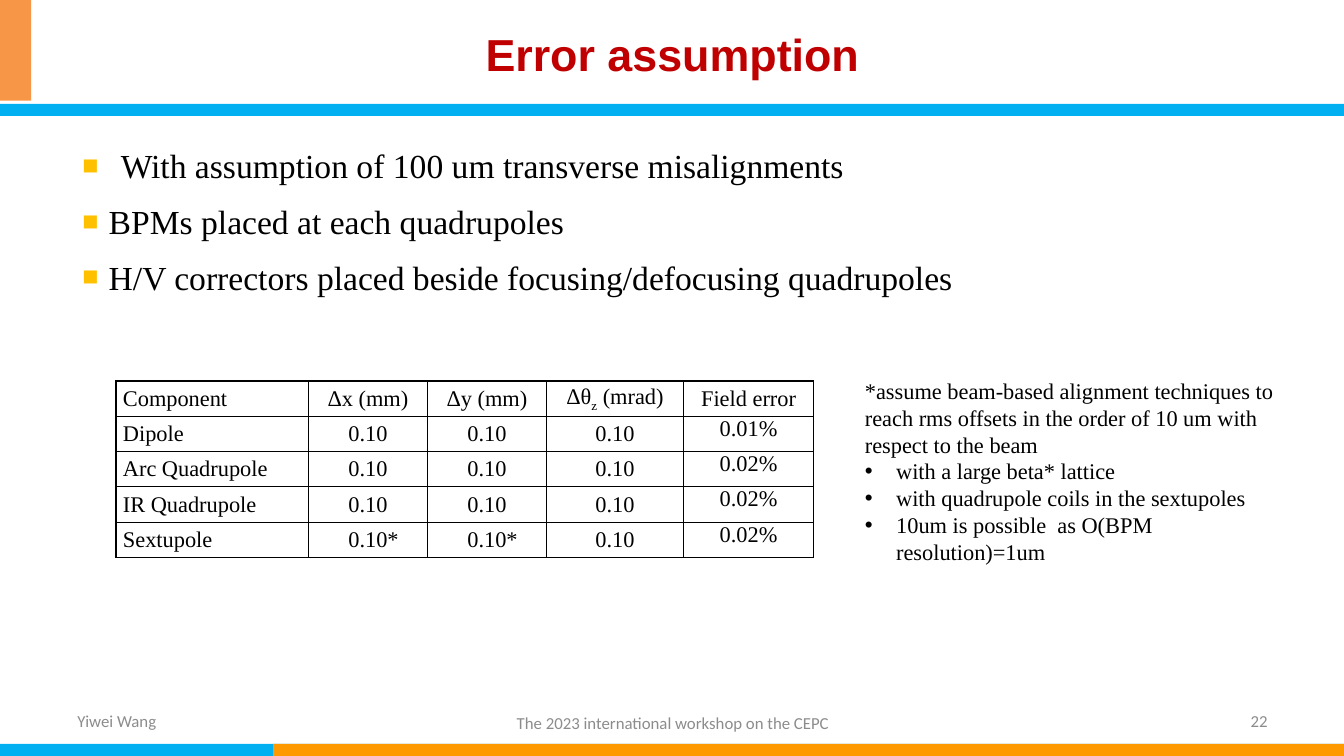
from pptx import Presentation
from pptx.dml.color import RGBColor
from pptx.enum.shapes import MSO_SHAPE as Shape
from pptx.enum.text import MSO_ANCHOR as Anchor, PP_ALIGN as Align
from pptx.oxml.ns import qn
from pptx.util import Inches, Pt
from lxml.etree import SubElement

COLORS = {"blue": "00B0F0", "amber": "FF9900", "orange": "F79646", "red": "C00000",
          "gold": "FFC000", "black": "000000", "gray": "8C8C8C", "white": "FFFFFF"}
SERIF = "Times New Roman"
BARS = [
    ((0, 7.38, 13.33, 0.12), "blue"),
    ((2.71, 7.38, 10.63, 0.12), "amber"),
    ((0, 1.03, 13.33, 0.12), "blue"),
    ((0, 0, 0.31, 1), "orange"),
]
TITLE = "Error assumption"
POINTS = [
    ("With assumption of 100 um transverse misalignments", 0.38),
    ("BPMs placed at each quadrupoles", 0.26),
    ("H/V correctors placed beside focusing/defocusing quadrupoles", 0.26),
]
NOTE = ("*assume beam-based alignment techniques to reach rms offsets "
        "in the order of 10 um with respect to the beam")
NOTE_POINTS = [
    "with a large beta* lattice",
    "with quadrupole coils in the sextupoles",
    "10um is possible  as O(BPM resolution)=1um",
]
FOOTERS = [
    ("22", (9.56, 6.95, 3.11, 0.4), Align.RIGHT),
    ("Yiwei Wang", (0.67, 6.95, 3.11, 0.4), Align.LEFT),
    ("The 2023 international workshop on the CEPC", (3.92, 6.98, 5.51, 0.39), Align.CENTER),
]
TABLE_BOX = (1.15, 3.78, 6.92, 1.75)
COL_WIDTHS = [1.91, 1.18, 1.18, 1.36, 1.29]
ROW_HEIGHT = 0.35
ROWS = [
    ["Component", "Δx (mm)", "Δy (mm)", ("Δθ", "z", " (mrad)"), "Field error"],
    ["Dipole", "0.10", "0.10", "0.10", "0.01%"],
    ["Arc Quadrupole", "0.10", "0.10", "0.10", "0.02%"],
    ["IR Quadrupole", "0.10", "0.10", "0.10", "0.02%"],
    ["Sextupole", "0.10*", "0.10*", "0.10", "0.02%"],
]
TITLE_FONT = {"name": "Arial", "size": Pt(32), "bold": True}
POINT_FONT = {"name": SERIF, "size": Pt(24)}
SMALL_FONT = {"name": SERIF, "size": Pt(16)}
FOOTER_FONT = {"name": "Calibri", "size": Pt(12)}


def rgb(name):
    return RGBColor.from_string(COLORS[name])


def inches(box):
    return [Inches(v) for v in box]


def set_all(target, values):
    for key, value in values.items():
        setattr(target, key, value)


def add_run(p, text, font, color="black"):
    r = p.add_run()
    r.text = text
    set_all(r.font, font)
    r.font.color.rgb = rgb(color)
    return r


def add_text(s, box, anchor=Anchor.TOP):
    tf = s.shapes.add_textbox(*inches(box)).text_frame
    set_all(tf, {"word_wrap": True, "vertical_anchor": anchor})
    return tf


def add_bullet(p, char, indent, color=None, percent=None):
    pPr = p._p.get_or_add_pPr()
    pPr.set("marL", str(Inches(indent)))
    pPr.set("indent", str(-Inches(indent)))
    if color:
        clr = SubElement(pPr, qn("a:buClr"))
        SubElement(clr, qn("a:srgbClr"), val=COLORS[color])
    if percent:
        SubElement(pPr, qn("a:buSzPct"), val=str(percent * 1000))
    SubElement(pPr, qn("a:buFont"), typeface="Arial")
    SubElement(pPr, qn("a:buChar"), char=char)


def add_borders(cell):
    tcPr = cell._tc.get_or_add_tcPr()
    for i, side in enumerate(("a:lnL", "a:lnR", "a:lnT", "a:lnB")):
        ln = tcPr.makeelement(qn(side), {"w": str(Pt(1))})
        fill = SubElement(ln, qn("a:solidFill"))
        SubElement(fill, qn("a:srgbClr"), val=COLORS["black"])
        tcPr.insert(i, ln)


def fill_cell(cell, content, row, col):
    top_aligned = row > 0 and col == len(COL_WIDTHS) - 1
    starred = content[-1] == "*"
    set_all(cell, {
        "margin_left": Inches(0.18 if starred else 0.07), "margin_right": Inches(0.07),
        "margin_top": 0, "margin_bottom": 0,
        "vertical_anchor": Anchor.TOP if top_aligned else Anchor.MIDDLE,
    })
    cell.fill.solid()
    cell.fill.fore_color.rgb = rgb("white")
    add_borders(cell)
    p = cell.text_frame.paragraphs[0]
    space = Pt(0 if top_aligned else 1.2)
    set_all(p, {"alignment": Align.CENTER if col else Align.LEFT,
                "space_before": space, "space_after": space})
    parts = (content,) if isinstance(content, str) else content
    for i, part in enumerate(parts):
        r = add_run(p, part, SMALL_FONT)
        if i == 1:
            r.font._element.set("baseline", "-25000")


def add_error_table(s):
    frame = s.shapes.add_table(len(ROWS), len(COL_WIDTHS), *inches(TABLE_BOX))
    table = frame.table
    set_all(table, {"first_row": False, "horz_banding": False})
    for column, width in zip(table.columns, COL_WIDTHS):
        column.width = Inches(width)
    for i, values in enumerate(ROWS):
        table.rows[i].height = Inches(ROW_HEIGHT)
        for j, content in enumerate(values):
            fill_cell(table.cell(i, j), content, i, j)


def main():
    prs = Presentation()
    set_all(prs, {"slide_width": Inches(13.33), "slide_height": Inches(7.5)})
    s = prs.slides.add_slide(prs.slide_layouts[6])

    for box, color in BARS:
        sp = s.shapes.add_shape(Shape.RECTANGLE, *inches(box))
        sp.shadow.inherit = False
        sp.fill.solid()
        sp.fill.fore_color.rgb = rgb(color)
        sp.line.fill.background()

    p = add_text(s, (0.92, 0.03, 11.5, 1), Anchor.MIDDLE).paragraphs[0]
    p.alignment = Align.CENTER
    add_run(p, TITLE, TITLE_FONT, "red")

    tf = add_text(s, (0.72, 1.39, 11.5, 1.97))
    for i, (text, indent) in enumerate(POINTS):
        p = tf.add_paragraph() if i else tf.paragraphs[0]
        set_all(p, {"alignment": Align.JUSTIFY, "space_after": Pt(11)})
        add_bullet(p, "■", indent, "gold", 80)
        add_run(p, text, POINT_FONT)

    for text, box, align in FOOTERS:
        p = add_text(s, box, Anchor.MIDDLE).paragraphs[0]
        p.alignment = align
        add_run(p, text, FOOTER_FONT, "gray")

    tf = add_text(s, (8.48, 3.69, 4.31, 1.99))
    add_run(tf.paragraphs[0], NOTE, SMALL_FONT)
    for text in NOTE_POINTS:
        p = tf.add_paragraph()
        add_bullet(p, "•", 0.31)
        add_run(p, text, SMALL_FONT)

    add_error_table(s)
    prs.save("out.pptx")


if __name__ == "__main__":
    main()
